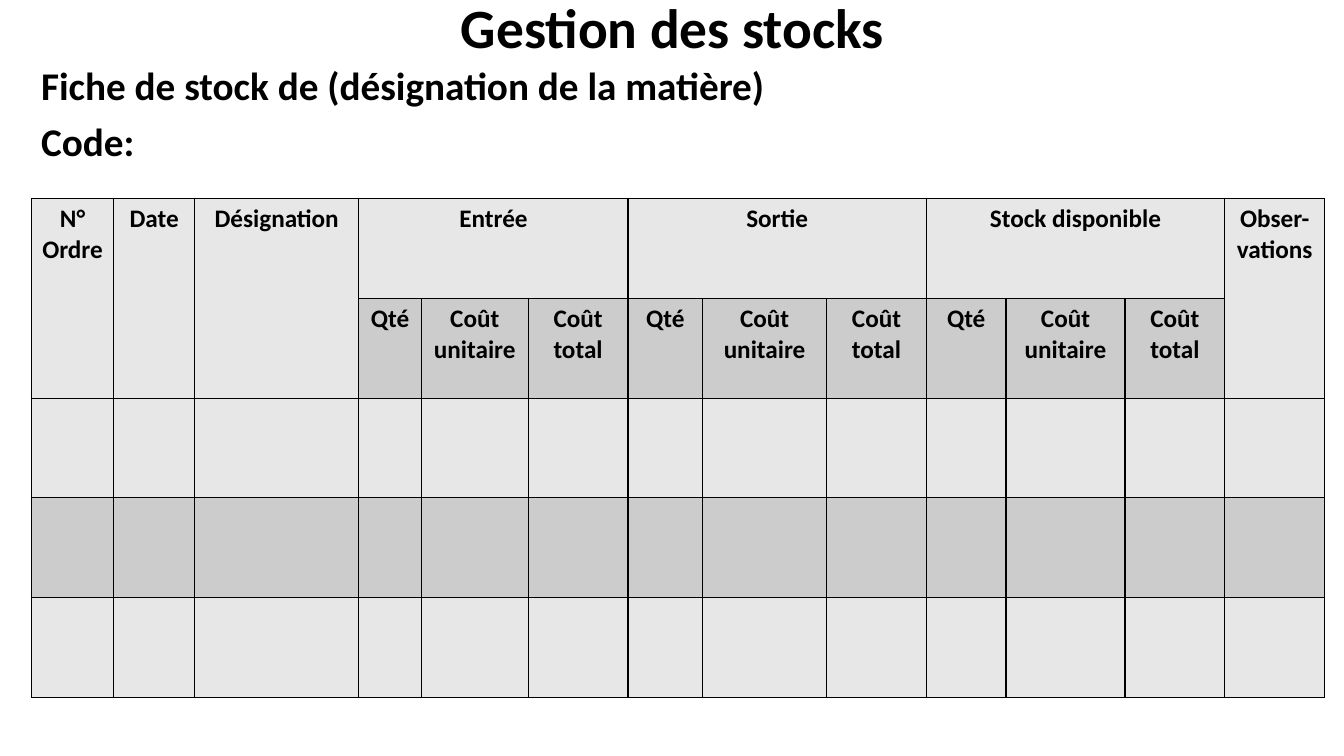
from lxml import etree
from pptx import Presentation
from pptx.dml.color import RGBColor
from pptx.enum.text import MSO_ANCHOR, PP_ALIGN
from pptx.oxml.ns import qn
from pptx.util import Inches, Pt

CENTER, JUSTIFY = PP_ALIGN.CENTER, PP_ALIGN.JUSTIFY
MIDDLE, TOP = MSO_ANCHOR.MIDDLE, MSO_ANCHOR.TOP

TITLE = ["Gestion des stocks"]
INTRO = ["Fiche de stock de (désignation de la matière)", "Code: "]

# Heading, then the widths of the columns below it
GROUPS = [
    ("N° Ordre", [0.82]),
    ("Date", [0.8]),
    ("Désignation", [1.63]),
    ("Entrée", [0.62, 1.06, 0.99]),
    ("Sortie", [0.74, 1.23, 0.99]),
    ("Stock disponible", [0.79, 1.18, 0.99]),
    ("Obser-vations", [0.99]),
]
PARTS = ["Qté", "Coût unitaire", "Coût total"]
ROWS, ROW_H = 5, 0.99
LEFT, WIDTH = 0.31, 12.83
TABLE_TOP = 1.97

THEME = {
    "font": "Calibri",
    "ink": RGBColor.from_string("000000"),
    "bands": [RGBColor.from_string(c) for c in ("E7E7E7", "CCCCCC")],
    "line": ("000000", Pt(1)),
    "title": Pt(39.6),
    "intro": Pt(28),
    "cell": Pt(18),
}


def write(par, text, size, **form):
    for name, value in form.items():
        setattr(par, name, value)
    run = par.add_run()
    run.text = text
    font = {"name": THEME["font"], "size": size, "bold": True}
    for name, value in font.items():
        setattr(run.font, name, value)
    run.font.color.rgb = THEME["ink"]


def add_text(slide, box, lines, size, anchor, **form):
    frame = slide.shapes.add_textbox(*map(Inches, box)).text_frame
    frame.word_wrap = True
    frame.vertical_anchor = anchor
    for i, line in enumerate(lines):
        par = frame.add_paragraph() if i else frame.paragraphs[0]
        write(par, line, size, line_spacing=0.9, **form)


def edge(cell):
    """Draw a solid line on all four sides of a cell."""
    color, width = THEME["line"]
    props = cell._tc.get_or_add_tcPr()
    for i, side in enumerate(("lnL", "lnR", "lnT", "lnB")):
        line = etree.Element(qn(f"a:{side}"), w=str(width))
        fill = etree.SubElement(line, qn("a:solidFill"))
        etree.SubElement(fill, qn("a:srgbClr"), val=color)
        props.insert(i, line)


def add_grid(slide):
    widths = [w for _, group in GROUPS for w in group]
    box = (LEFT, TABLE_TOP, WIDTH, ROWS * ROW_H)
    table = slide.shapes.add_table(ROWS, len(widths), *map(Inches, box)).table
    for col, width in zip(table.columns, widths):
        col.width = Inches(width)
    for r, row in enumerate(table.rows):
        row.height = Inches(ROW_H)
        for cell in row.cells:
            cell.fill.solid()
            cell.fill.fore_color.rgb = THEME["bands"][r % 2]
            edge(cell)

    def label(r, c, text):
        par = table.cell(r, c).text_frame.paragraphs[0]
        write(par, text, THEME["cell"], alignment=CENTER)

    start = 0
    for head, group in GROUPS:
        end = start + len(group) - 1
        split = len(group) > 1
        table.cell(0, start).merge(table.cell(0 if split else 1, end))
        label(0, start, head)
        if split:
            for i, part in enumerate(PARTS):
                label(1, start + i, part)
        start = end + 1


def main():
    deck = Presentation()
    deck.slide_width, deck.slide_height = Inches(13.33), Inches(7.5)
    slide = deck.slides.add_slide(deck.slide_layouts[6])
    add_text(slide, (0.92, 0, 11.5, 0.61), TITLE, THEME["title"], MIDDLE,
             alignment=CENTER)
    add_text(slide, (LEFT, 0.61, WIDTH, 6.73), INTRO, THEME["intro"], TOP,
             alignment=JUSTIFY, space_before=Pt(10))
    add_grid(slide)
    deck.save("out.pptx")


if __name__ == "__main__":
    main()
